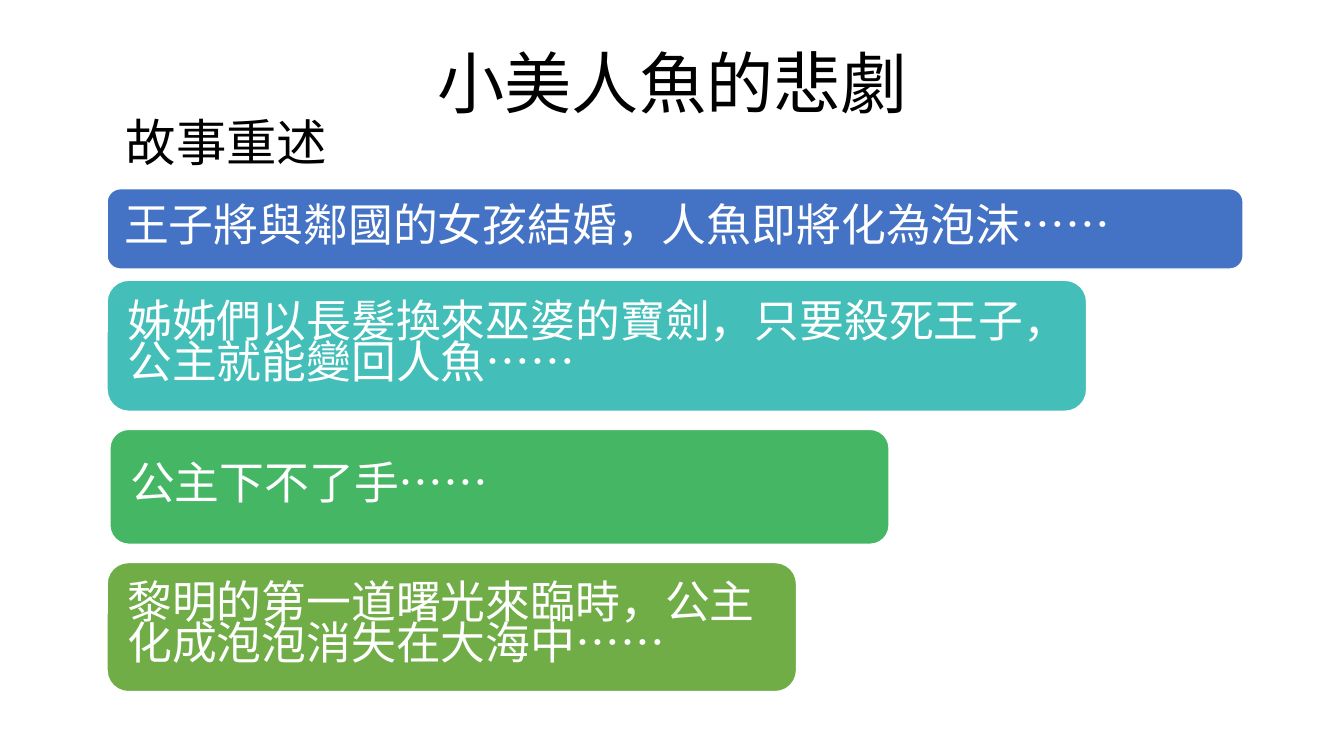
from lxml import etree
from pptx import Presentation
from pptx.dml.color import RGBColor
from pptx.enum.shapes import MSO_SHAPE
from pptx.enum.text import MSO_ANCHOR, PP_ALIGN
from pptx.oxml.ns import qn
from pptx.util import Pt

ROUNDED = MSO_SHAPE.ROUNDED_RECTANGLE
TOP, MIDDLE = MSO_ANCHOR.TOP, MSO_ANCHOR.MIDDLE
LEFT = PP_ALIGN.LEFT
FONT = "Noto Sans CJK SC"
COLORS = {
    "text": "000000",
    "light": "FFFFFF",
    "wedding": "4472C4",
    "sword": "43BEB9",
    "mercy": "45B664",
    "dawn": "70AD47",
}
CORNER = 0.165  # corner radius as a share of the bar height
CORNER_INSET = 0.29  # share of the radius a rounded rectangle adds to its text inset

# colour, box (left, top, width, height), text inset, text
STORY = [
    ("wedding", (76.5, 134.8, 811.5, 57.4), 12.2,
     "王子將與鄰國的女孩結婚，人魚即將化為泡沫……"),
    ("sword", (76.5, 200.2, 699.7, 93.6), 14.4,
     "姊姊們以長髮換來巫婆的寶劍，只要殺死王子，公主就能變回人魚……"),
    ("mercy", (78.5, 306.7, 556.6, 82.1), 14.4,
     "公主下不了手……"),
    ("dawn", (76.5, 401.8, 492.5, 92.2), 14.4,
     "黎明的第一道曙光來臨時，公主化成泡泡消失在大海中……"),
]


def rgb(name):
    return RGBColor.from_string(COLORS[name])


def write(shape, text, size, color, spacing, anchor, insets):
    """Fill a shape with one left-aligned paragraph; insets are (sides, top and bottom)."""
    frame = shape.text_frame
    frame.word_wrap = True
    frame.vertical_anchor = anchor
    frame.margin_left = frame.margin_right = Pt(insets[0])
    frame.margin_top = frame.margin_bottom = Pt(insets[1])
    paragraph = frame.paragraphs[0]
    paragraph.text = text
    paragraph.alignment = LEFT
    paragraph.line_spacing = spacing
    font = paragraph.font
    font.size = Pt(size)
    font.color.rgb = rgb(color)
    font.name = FONT
    properties = paragraph._p.pPr.find(qn("a:defRPr"))
    etree.SubElement(properties, qn("a:ea"), typeface=FONT)


def add_heading(slide, left, top, width, height):
    title = slide.shapes.title
    title.left, title.top = Pt(left), Pt(top)
    title.width, title.height = Pt(width), Pt(height)
    write(title, "小美人魚的悲劇", 48, "text", 0.88, TOP, (7.2, 3.6))


def add_subheading(slide, left, top, width, height):
    subheading = slide.shapes.add_textbox(Pt(left), Pt(top), Pt(width), Pt(height))
    write(subheading, "故事重述", 36, "text", 0.88, TOP, (7.2, 3.6))


def add_story_bar(slide, color, box, inset, text):
    bar = slide.shapes.add_shape(ROUNDED, *map(Pt, box))
    bar.adjustments[0] = CORNER
    bar.shadow.inherit = False
    bar.fill.solid()
    bar.fill.fore_color.rgb = rgb(color)
    bar.line.color.rgb = rgb("light")
    bar.line.width = Pt(1)
    margin = inset - CORNER_INSET * CORNER * box[3]
    write(bar, text, 32, "light", 0.76, MIDDLE, (margin, margin))


def main():
    deck = Presentation()
    deck.slide_width, deck.slide_height = Pt(960), Pt(540)
    slide = deck.slides.add_slide(deck.slide_layouts[5])
    add_heading(slide, 305.3, 33.1, 427.7, 123.8)
    for event in STORY:
        add_story_bar(slide, *event)
    add_subheading(slide, 82.8, 81.4, 283.7, 51.1)
    deck.save("out.pptx")


if __name__ == "__main__":
    main()
